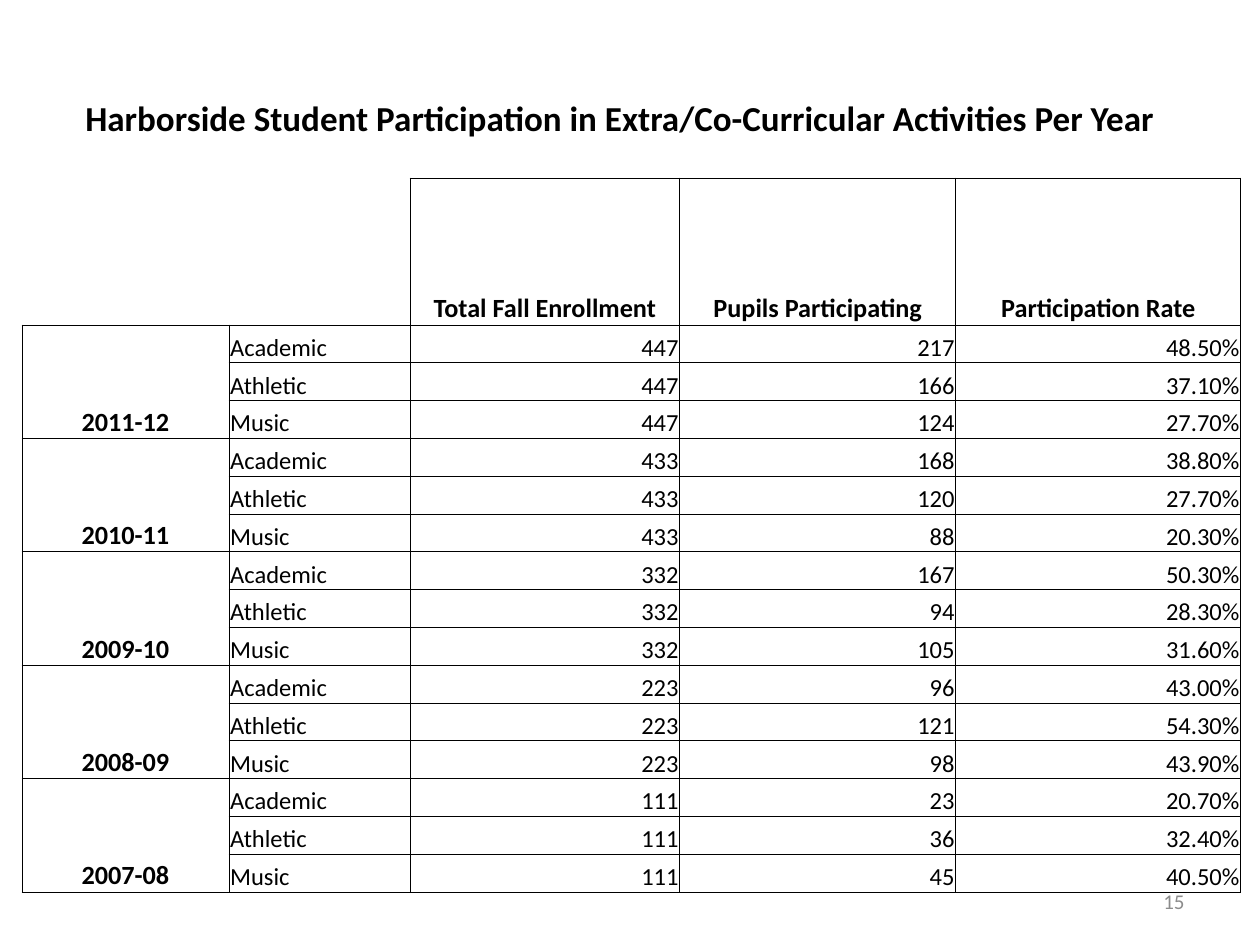
from lxml.etree import SubElement
from pptx import Presentation
from pptx.dml.color import RGBColor
from pptx.enum.text import MSO_ANCHOR, PP_ALIGN
from pptx.oxml.ns import qn
from pptx.util import Emu, Inches, Pt

PIXELS_PER_INCH = 126
COLORS = {"ink": "000000", "number": "8C8C8C"}

HEADINGS = ["Total Fall Enrollment", "Pupils Participating", "Participation Rate"]
ACTIVITIES = ["Academic", "Athletic", "Music"]
# Year, enrollment, then (pupils, rate) for each activity
YEARS = [
    ("2011-12", 447, [(217, "48.50%"), (166, "37.10%"), (124, "27.70%")]),
    ("2010-11", 433, [(168, "38.80%"), (120, "27.70%"), (88, "20.30%")]),
    ("2009-10", 332, [(167, "50.30%"), (94, "28.30%"), (105, "31.60%")]),
    ("2008-09", 223, [(96, "43.00%"), (121, "54.30%"), (98, "43.90%")]),
    ("2007-08", 111, [(23, "20.70%"), (36, "32.40%"), (45, "40.50%")]),
]
COLUMN_WIDTHS = [207, 181, 270, 276, 285]
HEADER_HEIGHT = 147
BODY_HEIGHT = 567


def px(length):
    return Emu(round(length * Inches(1) / PIXELS_PER_INCH))


class SlideBuilder:
    font_name = "Calibri"
    border_width = Pt(0.5)

    def __init__(self, slide):
        self.slide = slide

    def style(self, paragraph, size, color="ink", bold=False, align=PP_ALIGN.LEFT):
        paragraph.alignment = align
        font = paragraph.font
        font.name, font.size, font.bold = self.font_name, Pt(size), bold
        font.color.rgb = RGBColor.from_string(COLORS[color])

    def text(self, box, content, size, anchor=MSO_ANCHOR.TOP, **style):
        shape = self.slide.shapes.add_textbox(*map(px, box))
        frame = shape.text_frame
        frame.word_wrap = True
        frame.vertical_anchor = anchor
        frame.text = content
        self.style(frame.paragraphs[0], size, **style)

    def table(self, left, top, widths, header_height, body_height, row_count):
        frame = self.slide.shapes.add_table(
            row_count + 1, len(widths), px(left), px(top),
            px(sum(widths)), px(header_height + body_height))
        table = frame.table
        table.first_row = table.horz_banding = False
        for column, width in zip(table.columns, widths):
            column.width = px(width)
        for index, row in enumerate(table.rows):
            row.height = px(body_height / row_count if index else header_height)
        return table

    def borders(self, cell, sides):
        properties = cell._tc.get_or_add_tcPr()
        for side in "LRTB":
            line = SubElement(properties, qn(f"a:ln{side}"), w=str(self.border_width))
            if side in sides:
                fill = SubElement(line, qn("a:solidFill"))
                SubElement(fill, qn("a:srgbClr"), val=COLORS["ink"])
            else:
                SubElement(line, qn("a:noFill"))
        cell.fill.background()

    def cell(self, cell, content, size=14, **style):
        cell.text = str(content)
        cell.vertical_anchor = MSO_ANCHOR.BOTTOM
        cell.margin_left = cell.margin_right = cell.margin_top = Inches(0.01)
        cell.margin_bottom = 0
        self.style(cell.text_frame.paragraphs[0], size, **style)


def main():
    presentation = Presentation()
    presentation.slide_width, presentation.slide_height = Inches(10), Inches(7.5)
    builder = SlideBuilder(presentation.slides.add_slide(presentation.slide_layouts[6]))

    # Participation table: grid and borders, with an open top left corner
    group_size = len(ACTIVITIES)
    table = builder.table(22, 178, COLUMN_WIDTHS, HEADER_HEIGHT, BODY_HEIGHT,
                          len(YEARS) * group_size)
    corner_sides = {(0, 0): "B", (0, 1): "RB"}
    for row in range(len(table.rows)):
        for column in range(len(COLUMN_WIDTHS)):
            builder.borders(table.cell(row, column),
                            corner_sides.get((row, column), "LRTB"))

    # Column headings
    label = {"size": 15, "bold": True, "align": PP_ALIGN.CENTER}
    for column, heading in enumerate(HEADINGS, start=2):
        builder.cell(table.cell(0, column), heading, **label)

    # One group of rows for each year
    for group, (year, enrollment, results) in enumerate(YEARS):
        first = 1 + group * group_size
        year_cell = table.cell(first, 0)
        year_cell.merge(table.cell(first + group_size - 1, 0))
        builder.cell(year_cell, year, **label)
        for row, (activity, result) in enumerate(zip(ACTIVITIES, results), start=first):
            builder.cell(table.cell(row, 1), activity)
            for column, value in enumerate((enrollment, *result), start=2):
                builder.cell(table.cell(row, column), value, align=PP_ALIGN.RIGHT)

    # Title and slide number
    builder.text(
        (73, 90, 1124, 55),
        "Harborside Student Participation in Extra/Co-Curricular Activities Per Year",
        20, bold=True)
    builder.text((903, 876, 294, 50), "15", 12, anchor=MSO_ANCHOR.MIDDLE,
                 color="number", align=PP_ALIGN.RIGHT)

    presentation.save("out.pptx")


if __name__ == "__main__":
    main()
